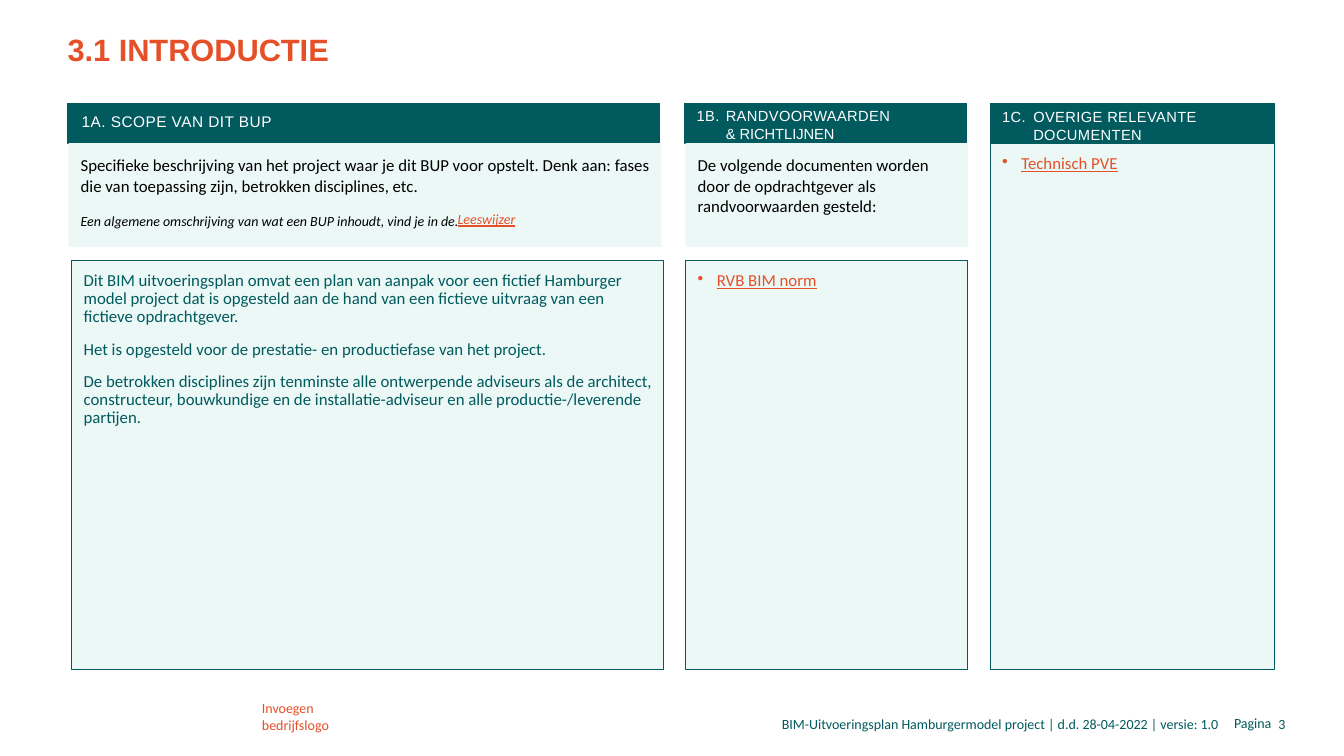
from pptx import Presentation
from pptx.dml.color import RGBColor
from pptx.enum.shapes import MSO_SHAPE as SHAPE
from pptx.enum.text import MSO_ANCHOR as ANCHOR, PP_ALIGN as ALIGN
from pptx.oxml.ns import qn
from pptx.util import Pt
from lxml import etree

PX = 9144  # 100 px to the inch
TEAL = RGBColor(0x00, 0x5A, 0x5E)
MINT = RGBColor(0xEB, 0xF8, 0xF6)
ORANGE = RGBColor(0xE5, 0x50, 0x28)
WHITE = RGBColor(0xFF, 0xFF, 0xFF)
BLACK = RGBColor(0, 0, 0)

HEADER_TOP, HEADER_HEIGHT = 103, 39
PANEL_TOP = HEADER_TOP + HEADER_HEIGHT
INTRO_HEIGHT = 103
BODY_TOP, BODY_BOTTOM = 258, 664

TEXT_INSETS = (10, 5, 10, 5)
NUMBER_INSETS = (12, 5, 10, 5)
PANEL_INSETS = (12, 12, 8, 0)

HEADER_FONT = {"name": "Arial", "size": 10.5, "color": WHITE}
INTRO_FONT = {"name": "Calibri", "size": 12, "color": BLACK}
BODY_FONT = {"name": "Calibri", "size": 12, "color": TEAL}
LINK_FONT = {"name": "Calibri", "size": 12, "color": ORANGE, "underline": True}
FOOTER_FONT = {"name": "Calibri", "size": 10, "color": TEAL}


def set_font(font, values):
    for key, value in values.items():
        if key == "color":
            font.color.rgb = value
        else:
            setattr(font, key, Pt(value) if key == "size" else value)


def add_bullet(paragraph):
    properties = paragraph._p.get_or_add_pPr()
    properties.set("marL", str(19 * PX))
    properties.set("indent", str(-19 * PX))
    etree.SubElement(properties, qn("a:buChar")).set("char", "•")


def write(shape, lines, font, insets=TEXT_INSETS, anchor=ANCHOR.TOP,
          align=ALIGN.LEFT, line_spacing=None, gap=0, tracking=0, bullet=False):
    """Fill a shape with paragraphs of one style and return them."""
    frame = shape.text_frame
    frame.word_wrap = True
    frame.vertical_anchor = anchor
    for side, inset in zip(("left", "top", "right", "bottom"), insets):
        setattr(frame, f"margin_{side}", inset * PX)
    for index, line in enumerate(lines):
        paragraph = frame.add_paragraph() if index else frame.paragraphs[0]
        paragraph.alignment = align
        if line_spacing:
            paragraph.line_spacing = line_spacing
        if index and gap:
            paragraph.space_before = Pt(gap)
        if bullet:
            add_bullet(paragraph)
        run = paragraph.add_run()
        run.text = line
        set_font(run.font, font)
        if tracking:
            run._r.get_or_add_rPr().set("spc", str(tracking))
    return frame.paragraphs


def add_text(slide, box, lines, font, **style):
    shape = slide.shapes.add_textbox(*(length * PX for length in box))
    return write(shape, lines, font, **style)


def add_panel(slide, box, fill, outlined=True):
    shape = slide.shapes.add_shape(SHAPE.RECTANGLE, *(length * PX for length in box))
    shape.shadow.inherit = False
    shape.fill.solid()
    shape.fill.fore_color.rgb = fill
    if outlined:
        shape.line.color.rgb = TEAL
        shape.line.width = Pt(0.75)
    else:
        shape.line.fill.background()
    return shape


def add_scope_header(slide, left, width):
    bar = add_panel(slide, (left, HEADER_TOP, width, HEADER_HEIGHT), TEAL)
    write(bar, ["1A. SCOPE VAN DIT BUP"], {**HEADER_FONT, "size": 11},
          insets=(14, 4, 10, 6), anchor=ANCHOR.MIDDLE, line_spacing=0.9, tracking=30)


def add_numbered_header(slide, left, width, number, lines, indent, rise):
    """Two-line column header whose title stands beside its number."""
    add_panel(slide, (left, HEADER_TOP, width, HEADER_HEIGHT), TEAL)
    top = HEADER_TOP - rise
    titles = add_text(slide, (left + indent, top, width - indent - 20, HEADER_HEIGHT),
                      lines, HEADER_FONT, tracking=30)
    for paragraph in titles[1:]:
        paragraph.runs[0]._r.get_or_add_rPr().set("spc", "0")
    add_text(slide, (left, top, 55, 45), [number], HEADER_FONT,
             insets=NUMBER_INSETS, tracking=30)


def add_intro(slide, left, width, lines):
    panel = add_panel(slide, (left, PANEL_TOP, width, INTRO_HEIGHT), MINT, outlined=False)
    return write(panel, lines, INTRO_FONT, insets=PANEL_INSETS, gap=12)


def add_body(slide, left, width, lines, font, top=BODY_TOP, bullet=False):
    panel = add_panel(slide, (left, top, width, BODY_BOTTOM - top), MINT)
    write(panel, lines, font, insets=PANEL_INSETS, line_spacing=0.9, gap=10, bullet=bullet)


def add_scope_column(slide, left, width):
    add_scope_header(slide, left, width)
    intro = add_intro(slide, left + 1, width + 1, [
        "Specifieke beschrijving van het project waar je dit BUP voor opstelt. "
        "Denk aan: fases die van toepassing zijn, betrokken disciplines, etc.",
        "Een algemene omschrijving van wat een BUP inhoudt, vind je in de.",
    ])
    set_font(intro[1].runs[0].font, {"size": 10, "italic": True})
    add_text(slide, (left + 377, PANEL_TOP + 62, 81, 27), ["Leeswijzer"],
             {**LINK_FONT, "size": 10, "italic": True})
    add_body(slide, left + 4, width, [
        "Dit BIM uitvoeringsplan omvat een plan van aanpak voor een fictief Hamburger "
        "model project dat is opgesteld aan de hand van een fictieve uitvraag van een "
        "fictieve opdrachtgever.",
        "Het is opgesteld voor de prestatie- en productiefase van het project.",
        "De betrokken disciplines zijn tenminste alle ontwerpende adviseurs als de "
        "architect, constructeur, bouwkundige en de installatie-adviseur en alle "
        "productie-/leverende partijen.",
    ], BODY_FONT)


def add_conditions_column(slide, left, width):
    add_numbered_header(slide, left, width, "1B.",
                        ["RANDVOORWAARDEN", "& RICHTLIJNEN"], indent=31, rise=2)
    add_intro(slide, left + 1, width, [
        "De volgende documenten worden door de opdrachtgever als randvoorwaarden gesteld:"])
    add_body(slide, left + 1, width, ["RVB BIM norm"], LINK_FONT, bullet=True)


def add_documents_column(slide, left, width):
    add_numbered_header(slide, left, width, "1C.",
                        ["OVERIGE RELEVANTE DOCUMENTEN"], indent=33, rise=1)
    add_body(slide, left, width, ["Technisch PVE"], LINK_FONT, top=PANEL_TOP, bullet=True)


def add_footer(slide, top):
    add_text(slide, (250, top - 15, 114, 44), ["Invoegen", "bedrijfslogo"],
             {**FOOTER_FONT, "color": ORANGE})
    add_text(slide, (677, top + 1, 541, 27),
             ["BIM-Uitvoeringsplan Hamburgermodel project | d.d. 28-04-2022 | versie: 1.0"],
             FOOTER_FONT, align=ALIGN.RIGHT)
    add_text(slide, (1207, top, 54, 27), ["Pagina"], FOOTER_FONT,
             insets=(0, 5, 0, 5), align=ALIGN.RIGHT)
    add_text(slide, (1265, top, 44, 28), ["3"], FOOTER_FONT,
             insets=(3, 5, 0, 5), anchor=ANCHOR.MIDDLE)


def main():
    presentation = Presentation()
    presentation.slide_width = 1333 * PX
    presentation.slide_height = 750 * PX
    slide = presentation.slides.add_slide(presentation.slide_layouts[6])
    add_text(slide, (67, 26, 581, 47), ["3.1 INTRODUCTIE"],
             {"name": "Arial", "size": 22, "color": ORANGE, "bold": True},
             insets=(0, 5, 10, 5))
    add_scope_column(slide, 67, 587)
    add_conditions_column(slide, 679, 280)
    add_documents_column(slide, 982, 282)
    add_footer(slide, 704)
    presentation.save("out.pptx")


if __name__ == "__main__":
    main()
